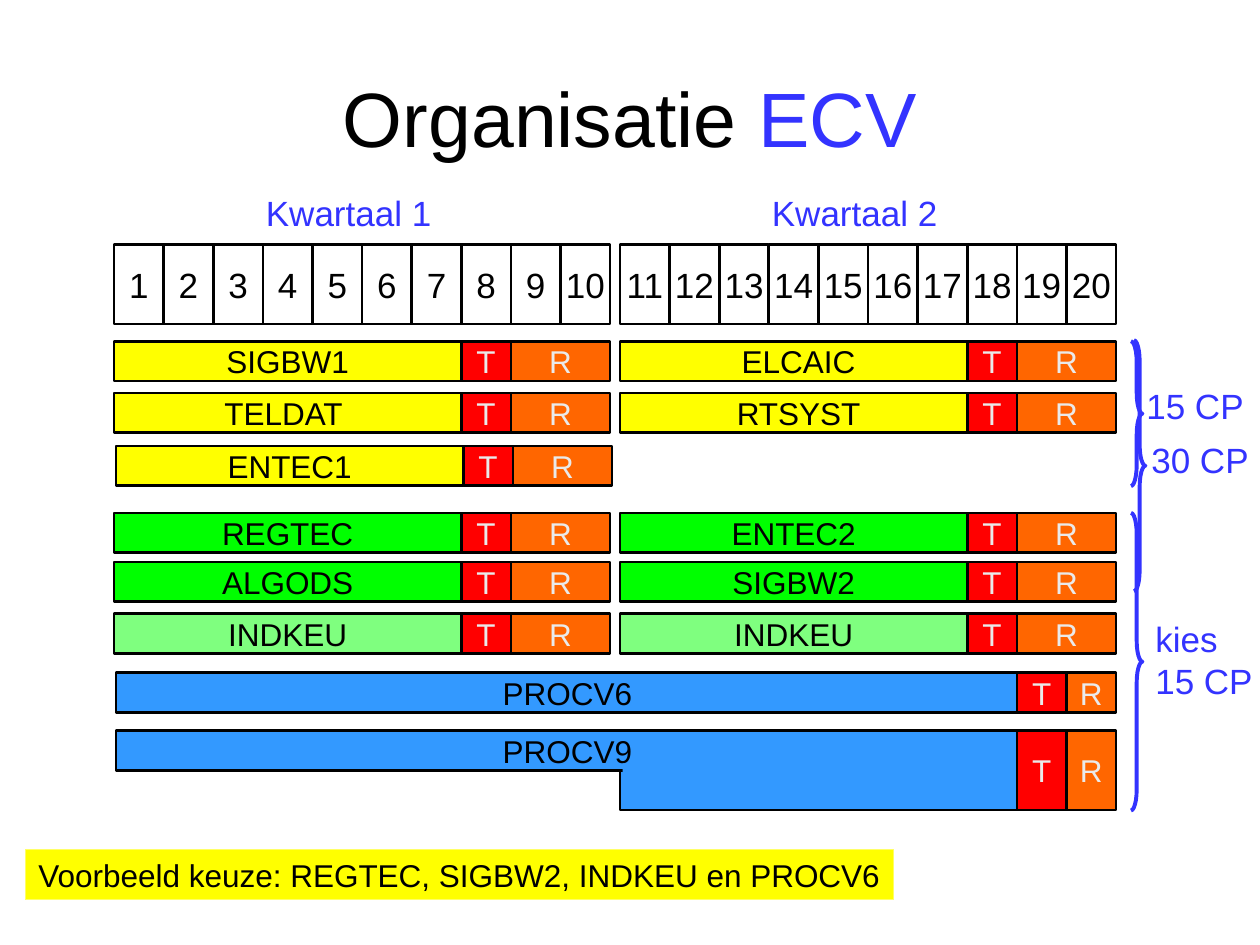
import pptx
import pptx.util
import pptx.dml.color
import pptx.enum.shapes
import pptx.enum.text
import pptx.oxml
import pptx.oxml.ns
from pptx.util import Cm

SHAPE = pptx.enum.shapes.MSO_SHAPE
ALIGN = pptx.enum.text.PP_ALIGN
ANCHOR = pptx.enum.text.MSO_ANCHOR

COLORS = {
    "black": "000000", "white": "FFFFFF", "blue": "3333FF", "pale": "EAEAEA",
    "yellow": "FFFF00", "note line": "FFFF66", "green": "00FF00",
    "sky": "3399FF", "red": "FF0000", "orange": "FF6600",
}

# All lengths are in centimetres; one week is one centimetre wide.
TITLE = [("Organisatie ", "black"), ("ECV", "blue")]
QUARTERS = [("Kwartaal 1", 2.3, 4.3), ("Kwartaal 2", 12.5, 14.5)]  # text, weeks left, label left
WEEKS_PER_QUARTER = 10
TEACHING_WEEKS = 7
WEEKS_TOP, WEEKS_HEIGHT = 4.93, 1.6
BAR_HEIGHT = 0.8

# name, quarter, top, fill, opacity, extra width, shift right
COURSES = [
    ("REGTEC", 0, 10.34, "green", 100, 0, 0),
    ("ALGODS", 0, 11.33, "green", 100, 0, 0),
    ("ENTEC2", 1, 10.34, "green", 100, 0, 0),
    ("SIGBW2", 1, 11.33, "green", 100, 0, 0),
    ("INDKEU", 0, 12.37, "green", 50, 0, 0),
    ("INDKEU", 1, 12.37, "green", 50, 0, 0),
    ("TELDAT ", 0, 7.92, "yellow", 100, 0, 0),
    ("RTSYST", 1, 7.92, "yellow", 100, 0.2, 0),
    ("SIGBW1", 0, 6.88, "yellow", 100, 0, 0),
    ("ELCAIC", 1, 6.88, "yellow", 100, 0.2, 0),
    ("ENTEC1", 0, 8.99, "yellow", 100, 0, 0.04),
]
# name, top, total height
PROJECTS = [("PROCV6", 13.56, 0.8), ("PROCV9", 14.73, 1.6)]
# label, label left, label top, label height, brace left, brace top, brace height
CREDITS = [
    ("kies\n15 CP", 23.04, 12.32, 1.96, 22.8, 10.34, 6),
    ("15 CP", 22.86, 7.62, 1.12, 22.8, 6.88, 2.92),
    ("30 CP", 22.96, 8.72, 1.12, 22.86, 6.86, 5.06),
]
NOTE = "Voorbeeld keuze: REGTEC, SIGBW2, INDKEU en PROCV6"


def rgb(name):
    return pptx.dml.color.RGBColor.from_string(COLORS[name])


def write_text(frame, text, size=18, color="black", align=ALIGN.CENTER,
               anchor=ANCHOR.MIDDLE, wrap=False):
    frame.word_wrap = wrap
    frame.vertical_anchor = anchor
    for number, line in enumerate(text.split("\n")):
        para = frame.add_paragraph() if number else frame.paragraphs[0]
        para.alignment = align
        span = para.add_run()
        span.text = line
        span.font.name = "Arial"
        span.font.size = pptx.util.Pt(size)
        span.font.color.rgb = rgb(color)


def add_box(shapes, left, top, width, height, fill, text="", line="black",
            line_width=1.5, opacity=100, **text_format):
    box = shapes.add_shape(SHAPE.RECTANGLE, Cm(left), Cm(top), Cm(width), Cm(height))
    box.shadow.inherit = False
    box.fill.solid()
    box.fill.fore_color.rgb = rgb(fill)
    if opacity < 100:
        color_node = box.fill._xPr.find(".//" + pptx.oxml.ns.qn("a:srgbClr"))
        alpha = pptx.oxml.parse_xml(
            f'<a:alpha {pptx.oxml.ns.nsdecls("a")} val="{opacity * 1000}"/>')
        color_node.append(alpha)
    if line:
        box.line.color.rgb = rgb(line)
        box.line.width = pptx.util.Pt(line_width)
    else:
        box.line.fill.background()
    if text:
        write_text(box.text_frame, text, **text_format)


def add_label(shapes, text, left, top, width, height, **text_format):
    label = shapes.add_textbox(Cm(left), Cm(top), Cm(width), Cm(height))
    label.text_frame.margin_right = 0 if text_format.get("align") == ALIGN.LEFT else Cm(0.25)
    write_text(label.text_frame, text, size=20, color="blue",
               anchor=ANCHOR.TOP, wrap=True, **text_format)


def add_test_and_resit(shapes, left, top, height, resit_weeks):
    """Add the one-week T box and the R box that follows it."""
    add_box(shapes, left, top, 1, height, "red", "T", color="pale")
    add_box(shapes, left + 1, top, resit_weeks, height, "orange", "R", color="pale")


def add_brace(shapes, left, top, height):
    brace = shapes.add_shape(SHAPE.RIGHT_BRACE, Cm(left), Cm(top), Cm(0.23), Cm(height))
    brace.shadow.inherit = False
    brace.adjustments[0], brace.adjustments[1] = 1.85, 0.5
    brace.fill.background()
    brace.line.color.rgb = rgb("blue")
    brace.line.width = pptx.util.Pt(2.25)


def add_title(page):
    title = page.shapes.title
    title.left, title.top, title.width, title.height = Cm(1.27), Cm(0.76), Cm(22.86), Cm(3.18)
    title.text_frame.vertical_anchor = ANCHOR.MIDDLE
    para = title.text_frame.paragraphs[0]
    para.alignment = ALIGN.CENTER
    for text, color in TITLE:
        span = para.add_run()
        span.text = text
        span.font.name = "Arial"
        span.font.size = pptx.util.Pt(44)
        span.font.color.rgb = rgb(color)


def add_calendar(shapes):
    for quarter, (name, left, label_left) in enumerate(QUARTERS):
        for week in range(WEEKS_PER_QUARTER):
            number = quarter * WEEKS_PER_QUARTER + week + 1
            add_box(shapes, left + week, WEEKS_TOP, 1, WEEKS_HEIGHT, "white",
                    str(number), size=20)
        add_label(shapes, name, label_left, 3.73, 5.46, 1.1)


def add_courses(shapes):
    for name, quarter, top, fill, opacity, extra, shift in COURSES:
        group = shapes.add_group_shape().shapes
        left = QUARTERS[quarter][1] + shift
        add_box(group, left, top, TEACHING_WEEKS + extra, BAR_HEIGHT, fill, name,
                opacity=opacity)
        add_test_and_resit(group, left + TEACHING_WEEKS, top, BAR_HEIGHT, 2)


def add_projects(shapes):
    second_left = QUARTERS[1][1]
    for name, top, height in PROJECTS:
        group = shapes.add_group_shape().shapes
        is_stepped = height > BAR_HEIGHT
        if is_stepped:
            add_box(group, second_left, top + BAR_HEIGHT, 8, height - BAR_HEIGHT, "sky")
        add_box(group, 2.34, top, 18.2, BAR_HEIGHT, "sky", name)
        if is_stepped:  # hides the border between the two steps
            add_box(group, second_left + 0.05, top + 0.66, 8, 0.53, "sky", line=None)
        add_test_and_resit(group, second_left + 8, top, height, 1)


def add_credits(shapes):
    for text, left, top, height, brace_left, brace_top, brace_height in CREDITS:
        group = shapes.add_group_shape().shapes
        add_label(group, text, left, top, 2.3, height, align=ALIGN.LEFT)
        add_brace(group, brace_left, brace_top, brace_height)


def main():
    deck = pptx.Presentation()
    deck.slide_width, deck.slide_height = Cm(25.4), Cm(19.05)
    page = deck.slides.add_slide(deck.slide_layouts[5])
    add_title(page)
    add_calendar(page.shapes)
    add_courses(page.shapes)
    add_projects(page.shapes)
    add_credits(page.shapes)
    add_box(page.shapes, 0.51, 17.12, 17.5, 1.02, "yellow", NOTE,
            line="note line", line_width=0.75)
    deck.save("out.pptx")


if __name__ == "__main__":
    main()
